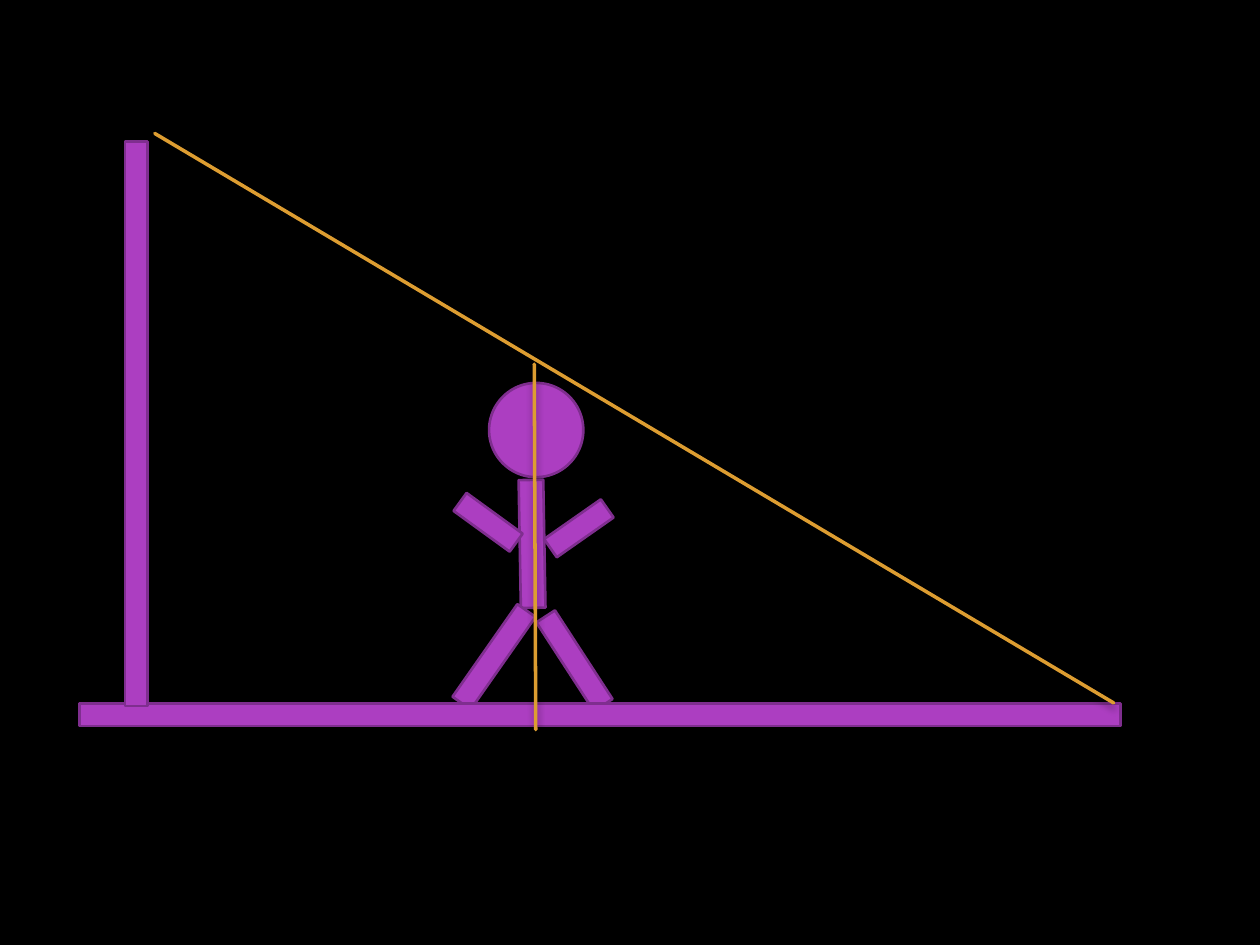
from lxml.etree import SubElement
from pptx import Presentation
from pptx.dml.color import RGBColor
from pptx.enum.shapes import MSO_CONNECTOR, MSO_SHAPE
from pptx.oxml.ns import qn
from pptx.util import Cm, Pt

COLORS = {
    "background": "000000",
    "body": "AC3EC1",
    "outline": "7F2E8F",
    "sight_line": "DD9D31",
    "shadow": "000000",
}
BAR_HEIGHT = 1.9


def color(name):
    return RGBColor.from_string(COLORS[name])


def add_part(slide, kind, left, top, width, height=BAR_HEIGHT, rotation=0):
    shape = slide.shapes.add_shape(kind, Cm(left), Cm(top), Cm(width), Cm(height))
    shape.rotation = rotation
    shape.shadow.inherit = False
    shape.fill.solid()
    shape.fill.fore_color.rgb = color("body")
    shape.line.color.rgb = color("outline")
    shape.line.width = Pt(1.5)


def add_shadow(connector):
    effects = SubElement(connector._element.spPr, qn("a:effectLst"))
    shadow = SubElement(effects, qn("a:outerShdw"), blurRad=str(Pt(4)),
                        dist=str(Pt(3)), dir="5400000", rotWithShape="0")
    shade = SubElement(shadow, qn("a:srgbClr"), val=COLORS["shadow"])
    SubElement(shade, qn("a:alpha"), val="35000")


def add_sight_line(slide, start_x, start_y, end_x, end_y):
    connector = slide.shapes.add_connector(
        MSO_CONNECTOR.STRAIGHT, Cm(start_x), Cm(start_y), Cm(end_x), Cm(end_y))
    connector.line.color.rgb = color("sight_line")
    connector.line.width = Pt(2)
    connector.line._get_or_add_ln().set("cap", "rnd")
    add_shadow(connector)


def add_stick_figure(slide, left, top):
    add_part(slide, MSO_SHAPE.OVAL, left + 1.46, top + 0.02, 1.9)
    limbs = [
        (0.57, 2.21, 3.51, 2.11, 89),         # torso
        (0.49, 1.88, 1.9, BAR_HEIGHT, 36),    # left arm
        (2.32, 2.0, 1.9, BAR_HEIGHT, 325),    # right arm
        (0.01, 4.59, 3.1, BAR_HEIGHT, 305),   # left leg
        (1.73, 4.67, 2.9, BAR_HEIGHT, 57),    # right leg
    ]
    for x, y, width, height, rotation in limbs:
        add_part(slide, MSO_SHAPE.MATH_MINUS, left + x, top + y, width, height, rotation)


def add_ground_and_pole(slide, left, top):
    """Place both bars from the top-left corner of the ground's frame."""
    add_part(slide, MSO_SHAPE.MATH_MINUS, left, top, 28.55)
    add_part(slide, MSO_SHAPE.MATH_MINUS, left - 2.82, top - 5.87, 15.49, rotation=90)


def add_sight_lines(slide, left, top):
    """Place the slanted line from the pole top and the upright through the figure."""
    add_sight_line(slide, left, top, left + 19.33, top + 11.48)
    add_sight_line(slide, left + 7.65, top + 4.65, left + 7.68, top + 12.02)


def main():
    presentation = Presentation()
    presentation.slide_width = Cm(25.4)
    presentation.slide_height = Cm(19.05)
    slide = presentation.slides.add_slide(presentation.slide_layouts[6])
    slide.background.fill.solid()
    slide.background.fill.fore_color.rgb = color("background")

    add_stick_figure(slide, 8.4, 7.7)
    add_ground_and_pole(slide, -2.18, 13.46)
    add_sight_lines(slide, 3.12, 2.69)
    presentation.save("out.pptx")


if __name__ == "__main__":
    main()
